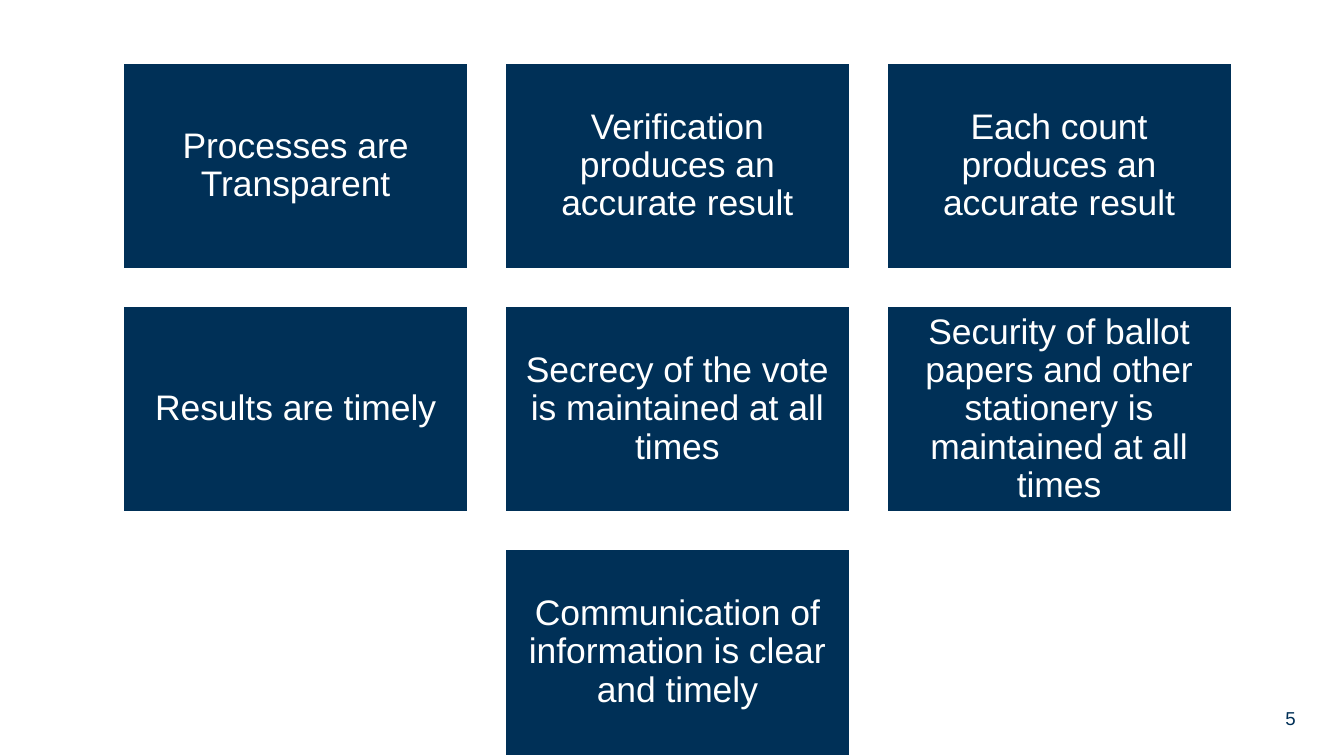
from pptx import Presentation
from pptx.dml.color import RGBColor
from pptx.enum import shapes, text
from pptx.util import Inches, Pt

# Content: rows of principles, each row centred on the grid
PRINCIPLES = [
    ["Processes are Transparent",
     "Verification produces an accurate result",
     "Each count produces an accurate result"],
    ["Results are timely",
     "Secrecy of the vote is maintained at all times",
     "Security of ballot papers and other stationery is maintained at all times"],
    ["Communication of information is clear and timely"],
]
PAGE_NUMBER = "5"

# Style and grid, in inches
NAVY, WHITE = "003057", "FFFFFF"
FONT = "Arial"
SLIDE_WIDTH = 10
SLIDE_HEIGHT = SLIDE_WIDTH * 9 / 16
GRID_CENTRE, GRID_TOP = 5.04, 0.46
BOX_WIDTH, BOX_HEIGHT, GAP = 2.58, 1.55, 0.26
COLUMN_STEP, ROW_STEP = BOX_WIDTH + GAP, BOX_HEIGHT + GAP


def color(hex_string):
    return RGBColor.from_string(hex_string)


def write_text(shape, content, *, size, font_color, align, anchor, margin=0, spacing=1.0):
    frame = shape.text_frame
    frame.word_wrap = True
    frame.vertical_anchor = anchor
    frame.margin_left = frame.margin_right = Inches(margin)
    frame.margin_top = frame.margin_bottom = Inches(margin)
    paragraph = frame.paragraphs[0]
    paragraph.alignment = align
    paragraph.line_spacing = spacing
    run = paragraph.add_run()
    run.text = content
    run.font.name = FONT
    run.font.size = Pt(size)
    run.font.color.rgb = color(font_color)


def add_principle(slide, content, left, top):
    box = slide.shapes.add_shape(
        shapes.MSO_SHAPE.RECTANGLE,
        Inches(left), Inches(top), Inches(BOX_WIDTH), Inches(BOX_HEIGHT))
    box.shadow.inherit = False
    box.fill.solid()
    box.fill.fore_color.rgb = color(NAVY)
    box.line.color.rgb = color(WHITE)
    box.line.width = Pt(2)
    write_text(box, content, size=19, font_color=WHITE, margin=0.08, spacing=0.9,
               align=text.PP_ALIGN.CENTER, anchor=text.MSO_ANCHOR.MIDDLE)


def main():
    presentation = Presentation()
    presentation.slide_width = Inches(SLIDE_WIDTH)
    presentation.slide_height = Inches(SLIDE_HEIGHT)
    slide = presentation.slides.add_slide(presentation.slide_layouts[6])

    # Page number
    number = slide.shapes.add_textbox(Inches(8.89), Inches(5.26), Inches(0.75), Inches(0.17))
    write_text(number, PAGE_NUMBER, size=10, font_color=NAVY,
               align=text.PP_ALIGN.RIGHT, anchor=text.MSO_ANCHOR.TOP)

    # Grid of principles
    for row, principles in enumerate(PRINCIPLES):
        row_width = len(principles) * COLUMN_STEP - GAP
        row_left = GRID_CENTRE - row_width / 2
        for column, principle in enumerate(principles):
            add_principle(slide, principle,
                          row_left + column * COLUMN_STEP, GRID_TOP + row * ROW_STEP)

    presentation.save("out.pptx")


if __name__ == "__main__":
    main()
